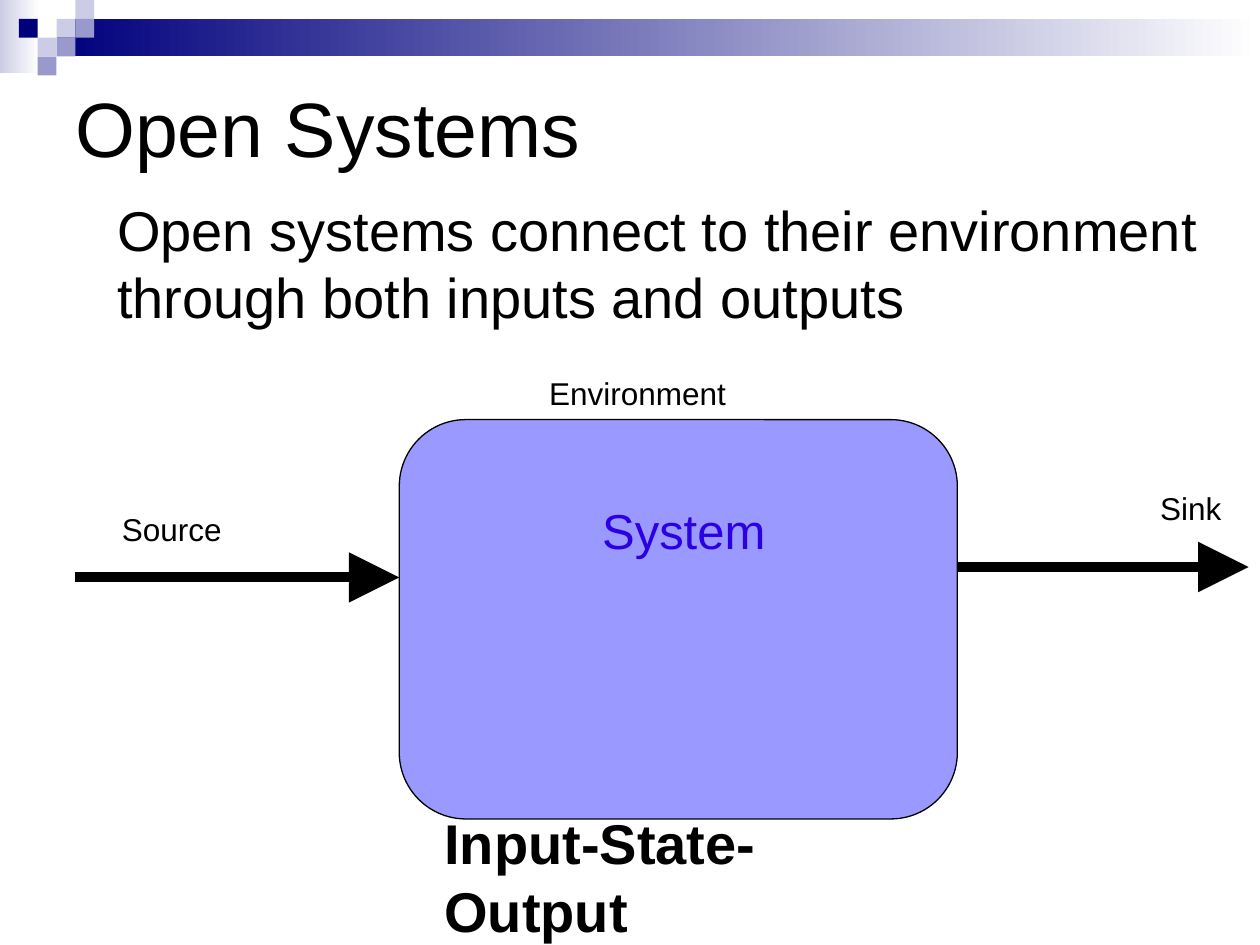
from lxml import etree
from pptx import Presentation
from pptx.dml.color import RGBColor
from pptx.enum.shapes import MSO_CONNECTOR, MSO_SHAPE
from pptx.enum.text import MSO_ANCHOR
from pptx.oxml.ns import qn
from pptx.util import Cm, Pt

RECT = MSO_SHAPE.RECTANGLE
ROUNDED = MSO_SHAPE.FLOWCHART_ALTERNATE_PROCESS
STRAIGHT = MSO_CONNECTOR.STRAIGHT
TOP, MIDDLE = MSO_ANCHOR.TOP, MSO_ANCHOR.MIDDLE

COLORS = {
    "navy": "00007D",
    "mid": "9999CC",
    "pale": "CCCCE6",
    "white": "FFFFFF",
    "black": "000000",
    "system": "9999FF",
    "system_text": "2B00E4",
}
RGB = {name: RGBColor.from_string(value) for name, value in COLORS.items()}
CELL = 0.38  # side of a header square, in cm

prs = Presentation()
prs.slide_width, prs.slide_height = Cm(25.4), Cm(19.05)
s = prs.slides.add_slide(prs.slide_layouts[6])


def add_box(kind, x, y, w, h):
    """Add a preset shape without shadow or outline; lengths in cm."""
    sp = s.shapes.add_shape(kind, Cm(x), Cm(y), Cm(w), Cm(h))
    sp.shadow.inherit = False
    sp.line.fill.background()
    return sp


# Header gradients
for color, x, y, w, h in [
    ("pale", 0, 0, 0.79, 1.47),
    ("navy", 3 * CELL, CELL, 25.4 - 3 * CELL, 2 * CELL),
]:
    sp = add_box(RECT, x, y, w, h)
    sp.fill.gradient()
    sp.fill.gradient_angle = 0
    for stop, name in zip(sp.fill.gradient_stops, (color, "white")):
        stop.color.rgb = RGB[name]

# Header squares: colour, column, row
for color, col, row in [
    ("pale", 3, 1), ("pale", 4, 0), ("mid", 4, 1), ("pale", 2, 2),
    ("navy", 1, 1), ("mid", 3, 2), ("mid", 2, 3),
]:
    sp = add_box(RECT, col * CELL, row * CELL, CELL, CELL)
    sp.fill.solid()
    sp.fill.fore_color.rgb = RGB[color]

# System box
sp = add_box(ROUNDED, 8.05, 8.46, 11.25, 8.05)
sp.fill.solid()
sp.fill.fore_color.rgb = RGB["system"]
sp.line.color.rgb = RGB["black"]
sp.line.width = Pt(0.75)

# Input and output arrows
for x1, x2, y in [(1.52, 8.05, 11.64), (19.3, 25.17, 11.43)]:
    arrow = s.shapes.add_connector(STRAIGHT, Cm(x1), Cm(y), Cm(x2), Cm(y))
    arrow.line.color.rgb = RGB["black"]
    arrow.line.width = Pt(5.75)
    etree.SubElement(arrow.line._get_or_add_ln(), qn("a:tailEnd"),
                     type="triangle", w="lg", len="lg")
    etree.SubElement(arrow._element.spPr, qn("a:effectLst"))

# Texts: wording, left, top, width, height, size, colour, bold, wrap, anchor
for text, x, y, w, h, size, color, bold, wrap, anchor in [
    ("Open Systems", 1.27, 0.64, 22.86, 3.81, 44, "black", False, True, MIDDLE),
    ("Open systems connect to their environment through both inputs and outputs",
     2.11, 3.81, 22.86, 2.97, 32, "black", False, True, TOP),
    ("Environment", 10.82, 7.42, 4.93, 1.27, 18, "black", False, False, TOP),
    ("Source", 2.21, 10.16, 2.87, 1.27, 18, "black", False, False, TOP),
    ("Sink", 23.14, 9.73, 2.06, 1.27, 18, "black", False, False, TOP),
    ("System", 11.89, 9.96, 3.84, 1.45, 28, "system_text", False, False, TOP),
    ("Input-State-Output", 8.71, 16.18, 9.91, 1.6, 32, "black", True, True, TOP),
]:
    tf = s.shapes.add_textbox(Cm(x), Cm(y), Cm(w), Cm(h)).text_frame
    tf.word_wrap = wrap
    tf.vertical_anchor = anchor
    p = tf.paragraphs[0]
    p.text = text
    p.font.name = "Arial"
    p.font.size = Pt(size)
    p.font.bold = bold
    p.font.color.rgb = RGB[color]

prs.save("out.pptx")
